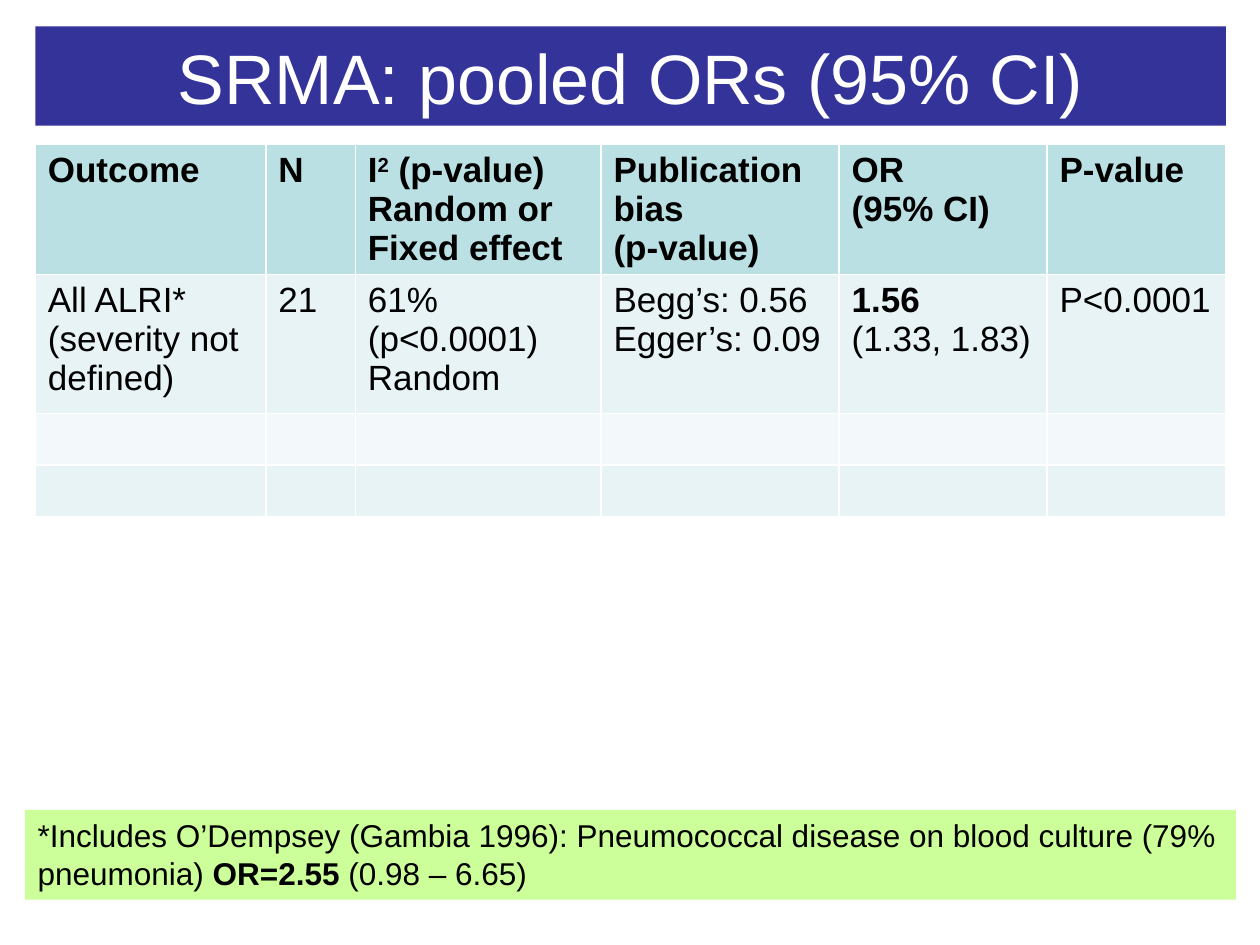
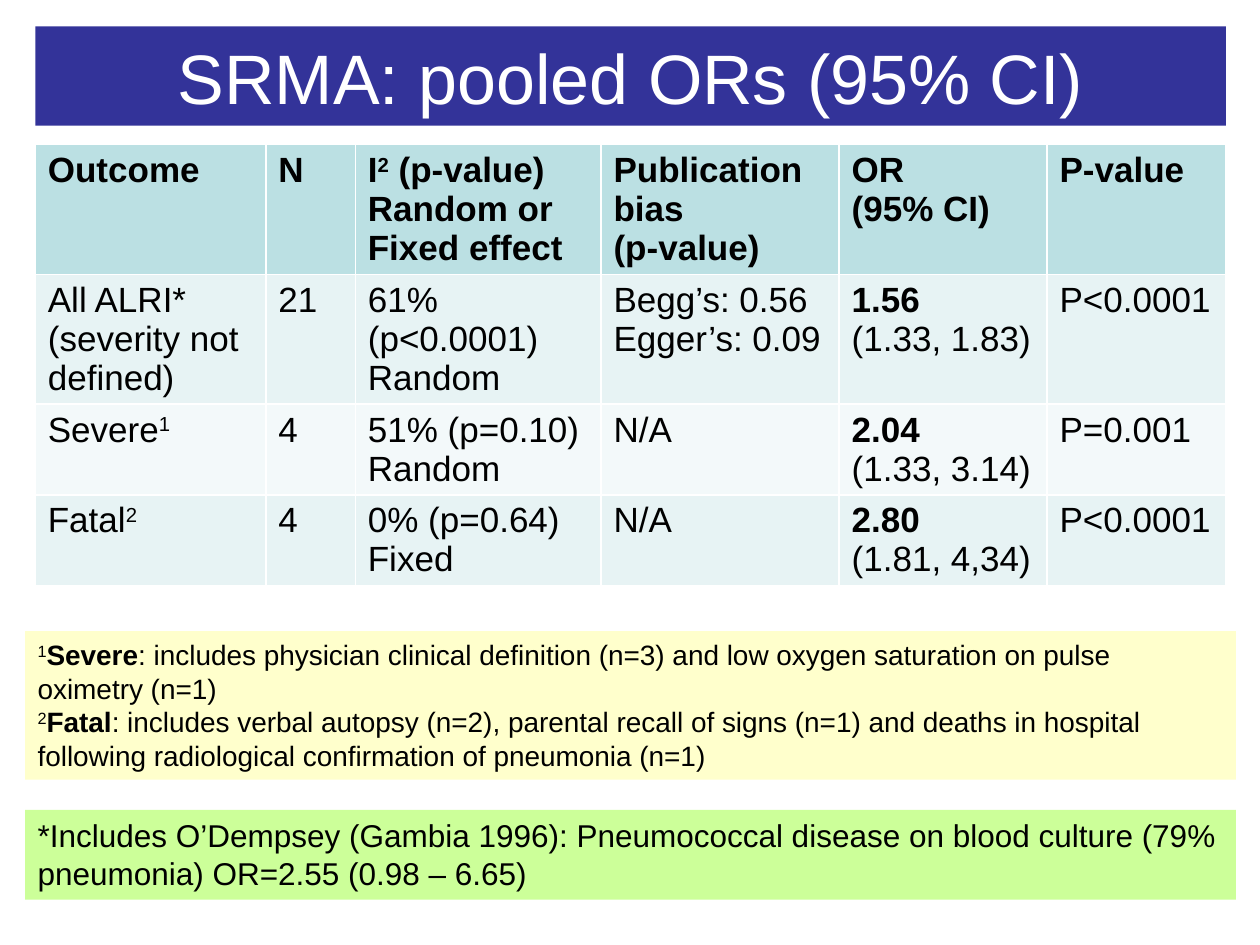
"""Build two slides of pooled odds ratios, the second with all table rows filled in."""
from dataclasses import dataclass

from pptx import Presentation
from pptx.dml.color import RGBColor
from pptx.enum.text import MSO_ANCHOR, PP_ALIGN
from pptx.util import Inches, Pt


@dataclass(frozen=True)
class Theme:
    font: str = "Arial"
    title_fill: str = "333399"
    title_text: str = "FFFFFF"
    text: str = "000000"
    header: str = "BBE0E3"
    bands: tuple = ("E7F3F4", "F3F9FA")
    yellow: str = "FFFFCC"
    green: str = "CCFF99"
    title_size: int = 40
    table_size: int = 20
    green_size: int = 18
    yellow_size: int = 16


T = Theme()
prs = Presentation()
prs.slide_width, prs.slide_height = Inches(10), Inches(7.5)
COL, ROW = prs.slide_width / 100, prs.slide_height / 100


def paint(fill, color):
    fill.solid()
    fill.fore_color.rgb = RGBColor.from_string(color)


def write(tf, text, size, color=T.text, bold=False, align=PP_ALIGN.LEFT):
    """Write lines of runs split by |, where # marks bold and ^ superscript."""
    tf.word_wrap = True
    for i, line in enumerate(text.split("\n")):
        p = tf.add_paragraph() if i else tf.paragraphs[0]
        p.alignment = align
        for part in line.split("|"):
            r = p.add_run()
            r.text = part.lstrip("#^")
            fmt = {"name": T.font, "size": Pt(size), "bold": bold or part.startswith("#")}
            for key, value in fmt.items():
                setattr(r.font, key, value)
            r.font.color.rgb = RGBColor.from_string(color)
            if part.startswith("^"):
                r._r.get_or_add_rPr().set("baseline", "30000")


TITLE = "SRMA: pooled ORs (95% CI)"
COLUMNS = [18.3, 7.1, 19.5, 18.9, 16.5, 14.2]
HEADER = ["Outcome", "N", "I|^2| (p-value)\nRandom or Fixed effect",
          "Publication bias\n(p-value)", "OR\n(95% CI)", "P-value"]
ALL_ALRI = ["All ALRI* (severity not defined)", "21", "61% (p<0.0001)\nRandom",
            "Begg’s: 0.56\nEgger’s: 0.09", "#1.56\n(1.33, 1.83)", "P<0.0001"]
SEVERE = ["Severe|^1", "4", "51% (p=0.10)\nRandom", "N/A", "#2.04\n(1.33, 3.14)", "P=0.001"]
FATAL = ["Fatal|^2", "4", "0% (p=0.64)\nFixed", "N/A", "#2.80\n(1.81, 4,34)", "P<0.0001"]
EMPTY = [""] * len(COLUMNS)

DEMPSEY = ("*Includes O’Dempsey (Gambia 1996): Pneumococcal disease on blood culture "
           "(79% pneumonia) {}OR=2.55{} (0.98 – 6.65)")
DEFINITIONS = ("^1|#Severe|: includes physician clinical definition (n=3) and low oxygen "
               "saturation on pulse oximetry (n=1)\n"
               "^2|#Fatal|: includes verbal autopsy (n=2), parental recall of signs (n=1) and "
               "deaths in hospital following radiological confirmation of pneumonia (n=1)")
GREEN_BOX = (85.7, 9.5, T.green, T.green_size)
YELLOW_BOX = (66.8, 15.7, T.yellow, T.yellow_size)

SLIDES = [
    {"rows": [HEADER, ALL_ALRI, EMPTY, EMPTY],
     "heights": [13.7, 14.7, 5.5, 5.5],
     "notes": [(DEMPSEY.format("|#", "|"), *GREEN_BOX)]},
    {"rows": [HEADER, ALL_ALRI, SEVERE, FATAL],
     "heights": [13.7, 13.7, 9.6, 9.6],
     "notes": [(DEFINITIONS, *YELLOW_BOX), (DEMPSEY.format("", ""), *GREEN_BOX)]},
]

for content in SLIDES:
    s = prs.slides.add_slide(prs.slide_layouts[5])
    title = s.shapes.title
    box = {"left": 2.8 * COL, "top": 2.8 * ROW, "width": 94.5 * COL, "height": 10.5 * ROW}
    for key, value in box.items():
        setattr(title, key, int(value))
    paint(title.fill, T.title_fill)
    title.text_frame.vertical_anchor = MSO_ANCHOR.MIDDLE
    write(title.text_frame, TITLE, T.title_size, T.title_text, align=PP_ALIGN.CENTER)

    rows, heights = content["rows"], content["heights"]
    table = s.shapes.add_table(len(rows), len(COLUMNS), int(2.8 * COL), int(15.3 * ROW),
                               int(sum(COLUMNS) * COL), int(sum(heights) * ROW)).table
    for column, width in zip(table.columns, COLUMNS):
        column.width = int(width * COL)
    for i, (texts, height) in enumerate(zip(rows, heights)):
        table.rows[i].height = int(height * ROW)
        for cell, text in zip(table.rows[i].cells, texts):
            paint(cell.fill, T.bands[(i - 1) % 2] if i else T.header)
            if text:
                write(cell.text_frame, text, T.table_size, bold=i == 0)

    for text, top, height, color, size in content["notes"]:
        sp = s.shapes.add_textbox(int(2 * COL), int(top * ROW), int(96.1 * COL), int(height * ROW))
        paint(sp.fill, color)
        write(sp.text_frame, text, size)

prs.save("out.pptx")
